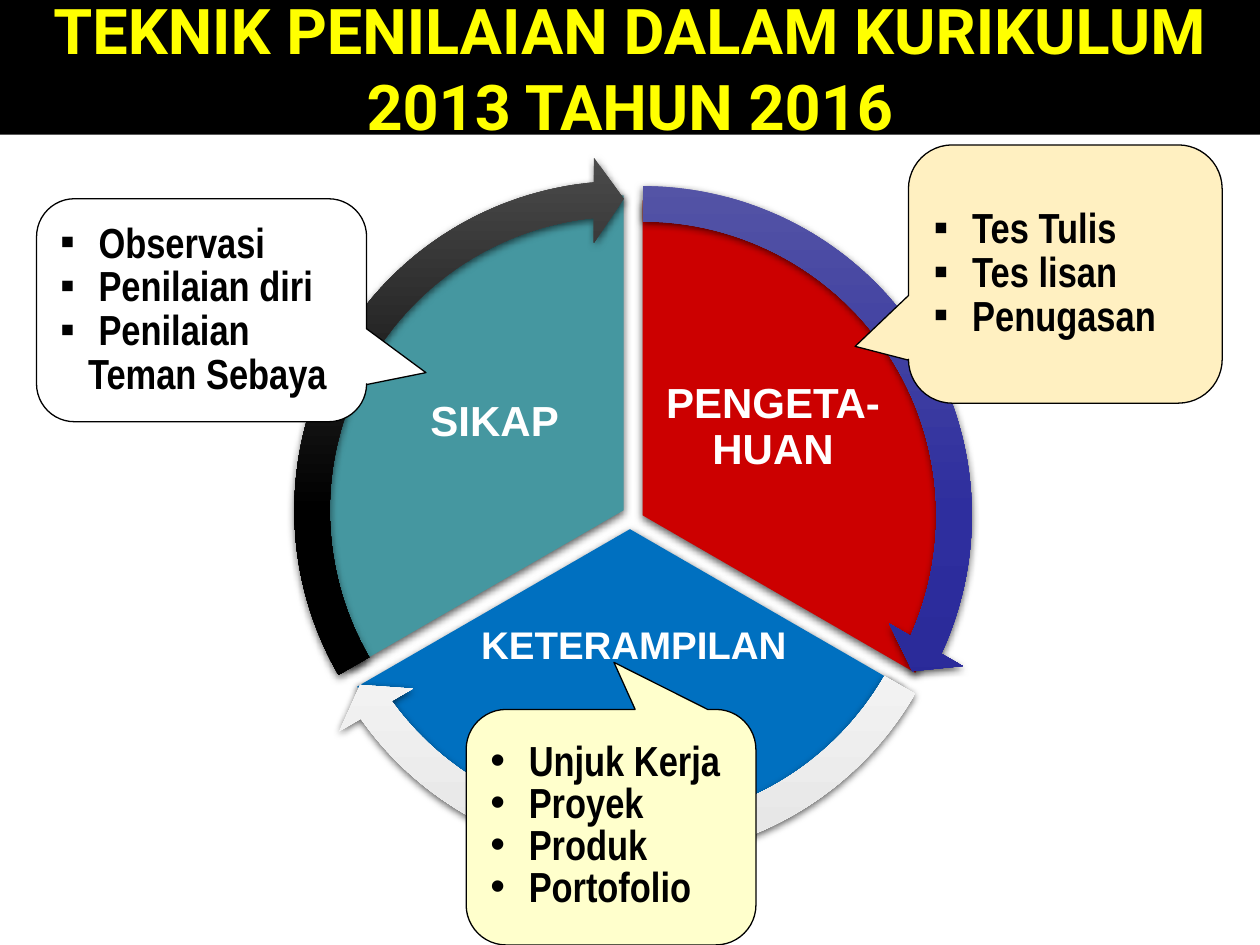
from copy import deepcopy

from lxml import etree
from pptx import Presentation
from pptx.dml.color import RGBColor
from pptx.enum.shapes import MSO_SHAPE
from pptx.enum.text import MSO_ANCHOR, MSO_AUTO_SIZE, PP_ALIGN
from pptx.oxml.ns import qn
from pptx.util import Pt

PIE, ARROW = MSO_SHAPE.PIE, MSO_SHAPE.CIRCULAR_ARROW
CALLOUT = MSO_SHAPE.ROUNDED_RECTANGULAR_CALLOUT
TOP, MIDDLE = MSO_ANCHOR.TOP, MSO_ANCHOR.MIDDLE
LEFT, CENTER = PP_ALIGN.LEFT, PP_ALIGN.CENTER
NO_AUTOFIT = MSO_AUTO_SIZE.NONE

BLACK = RGBColor(0x00, 0x00, 0x00)
WHITE = RGBColor(0xFF, 0xFF, 0xFF)
YELLOW = RGBColor(0xFF, 0xFF, 0x00)
RED = RGBColor(0xCC, 0x00, 0x00)
BLUE = RGBColor(0x00, 0x70, 0xC0)
TEAL = RGBColor(0x45, 0x97, 0xA0)
CREAM = RGBColor(0xFF, 0xF0, 0xC1)
PALE_YELLOW = RGBColor(0xFF, 0xFF, 0xCC)
INDIGO = [RGBColor(0x56, 0x56, 0xA6), RGBColor(0x2E, 0x2E, 0x9E), RGBColor(0x24, 0x24, 0x91)]
SILVER = [WHITE, WHITE, RGBColor(0xE3, 0xE3, 0xE3)]
CHARCOAL = [RGBColor(0x4B, 0x4B, 0x4B), BLACK, BLACK]

TITLE = "TEKNIK PENILAIAN DALAM KURIKULUM 2013 TAHUN 2016"

# Sectors run clockwise; angles are in degrees from three o'clock.
SECTORS = [
    dict(text="PENGETA-HUAN", size=24, anchor=MIDDLE, label=(377.3, 190.8, 128.9, 107.3),
         center=(367.2, 294.5), start=270, end=30, fill=RED, arrow=INDIGO),
    dict(text="KETERAMPILAN", size=22, anchor=TOP, label=(265.7, 355.7, 193, 94.3),
         center=(360, 302.4), start=30, end=150, fill=BLUE, arrow=SILVER),
    dict(text="SIKAP", size=24, anchor=MIDDLE, label=(218.2, 187.9, 128.9, 107.3),
         center=(356.4, 291.6), start=150, end=270, fill=TEAL, arrow=CHARCOAL),
]
SECTOR_RADIUS, ARROW_RADIUS = 180, 202.3
ARROW_WIDTH, ARROW_HEAD_ANGLE, ARROW_HEAD_WIDTH = 0.05, 5.46, 0.06
DEGREE = 0.6  # one degree as a shape adjustment

# Each line is (bullet, text).
CALLOUTS = [
    dict(frame=(266.4, 405.4, 165.6, 134.6), tip=(0.01, -0.7), fill=PALE_YELLOW, spacing=24,
         lines=[("•", "Unjuk Kerja"), ("•", "Proyek"), ("•", "Produk"), ("•", "Portofolio")]),
    dict(frame=(20.9, 113.6, 188.6, 127.4), tip=(0.68, 0.28), fill=WHITE, spacing=25,
         lines=[("▪", "Observasi"), ("▪", "Penilaian diri"), ("▪", "Penilaian"),
                (None, "Teman Sebaya")]),
    dict(frame=(519.1, 82.8, 179.3, 147.6), tip=(-0.67, 0.28), fill=CREAM, spacing=25,
         lines=[("▪", "Tes Tulis"), ("▪", "Tes lisan"), ("▪", "Penugasan")]),
]
CALLOUT_CORNER, BULLET_INDENT, PLAIN_INDENT = 0.17, 22, 16


def points(frame):
    return [Pt(value) for value in frame]


def set_font(paragraph, **values):
    color = values.pop("color")
    for name, value in values.items():
        setattr(paragraph.font, name, value)
    paragraph.font.color.rgb = color


def set_bullet(paragraph, bullet):
    """Hang the text behind its bullet, or indent it when there is none."""
    properties = paragraph._p.get_or_add_pPr()
    indent = BULLET_INDENT if bullet else PLAIN_INDENT
    properties.set("marL", str(Pt(indent)))
    properties.set("indent", str(Pt(-indent) if bullet else 0))
    if bullet:
        etree.SubElement(properties, qn("a:buFont"), typeface="Arial")
        etree.SubElement(properties, qn("a:buChar"), char=bullet)
    else:
        etree.SubElement(properties, qn("a:buNone"))


def add_soft_shadow(shape):
    shape.shadow.inherit = False
    effects = shape._element.spPr.find(qn("a:effectLst"))
    shadow = etree.SubElement(effects, qn("a:outerShdw"), blurRad=str(Pt(4.5)),
                              dist=str(Pt(1.5)), dir="5400000", rotWithShape="0")
    color = etree.SubElement(shadow, qn("a:srgbClr"), val="000000")
    etree.SubElement(color, qn("a:alpha"), val="63000")


def fill_gradient(shape, colors):
    """Spread the colours evenly from top to bottom."""
    shape.fill.gradient()
    shape.fill.gradient_angle = 270
    stop_list = next(shape._element.spPr.iter(qn("a:gsLst")))
    for _ in range(len(colors) - len(stop_list)):
        stop_list.append(deepcopy(stop_list[0]))
    for index, (stop, color) in enumerate(zip(shape.fill.gradient_stops, colors)):
        stop.color.rgb = color
        stop.position = index / (len(colors) - 1)


def add_round_part(page, kind, center, radius, adjustments):
    x, y = center
    shape = page.shapes.add_shape(
        kind, *points((x - radius, y - radius, 2 * radius, 2 * radius)))
    for index, value in enumerate(adjustments):
        shape.adjustments[index] = value
    shape.line.fill.background()
    add_soft_shadow(shape)
    return shape


def add_sector(page, sector):
    angles = sector["start"] * DEGREE, sector["end"] * DEGREE
    pie = add_round_part(page, PIE, sector["center"], SECTOR_RADIUS, angles)
    pie.fill.solid()
    pie.fill.fore_color.rgb = sector["fill"]

    frame = page.shapes.add_textbox(*points(sector["label"])).text_frame
    frame.word_wrap = True
    frame.vertical_anchor = sector["anchor"]
    for side in ("left", "right", "top", "bottom"):
        setattr(frame, f"margin_{side}", Pt(2.2))
    paragraph = frame.paragraphs[0]
    paragraph.text = sector["text"]
    paragraph.alignment = CENTER
    paragraph.line_spacing = 0.9
    set_font(paragraph, name="Arial", size=Pt(sector["size"]), bold=True, color=WHITE)


def add_arrow(page, sector):
    head = ARROW_HEAD_ANGLE
    adjustments = (ARROW_WIDTH, head * DEGREE, (sector["end"] - head) * DEGREE,
                   sector["start"] * DEGREE, ARROW_HEAD_WIDTH)
    arrow = add_round_part(page, ARROW, sector["center"], ARROW_RADIUS, adjustments)
    fill_gradient(arrow, sector["arrow"])


def add_callout(page, callout):
    box = page.shapes.add_shape(CALLOUT, *points(callout["frame"]))
    for index, value in enumerate((*callout["tip"], CALLOUT_CORNER)):
        box.adjustments[index] = value
    box.shadow.inherit = False
    box.fill.solid()
    box.fill.fore_color.rgb = callout["fill"]
    box.line.color.rgb = BLACK
    box.line.width = Pt(0.75)
    frame = box.text_frame
    frame.word_wrap = True
    frame.vertical_anchor = MIDDLE
    for index, (bullet, text) in enumerate(callout["lines"]):
        paragraph = frame.add_paragraph() if index else frame.paragraphs[0]
        paragraph.text = text
        paragraph.alignment = LEFT
        paragraph.line_spacing = Pt(callout["spacing"])
        set_bullet(paragraph, bullet)
        set_font(paragraph, name="Arial Narrow", size=Pt(24), bold=True, color=BLACK)


def add_title(page):
    title = page.shapes.title
    title.left, title.top, title.width, title.height = points((0, 0, 720, 77))
    title.fill.solid()
    title.fill.fore_color.rgb = BLACK
    frame = title.text_frame
    frame.text = TITLE
    frame.word_wrap = True
    frame.auto_size = NO_AUTOFIT
    frame.vertical_anchor = MIDDLE
    frame.paragraphs[0].alignment = CENTER
    set_font(frame.paragraphs[0], name="Roboto", size=Pt(36), bold=True, color=YELLOW)


def main():
    deck = Presentation()
    deck.slide_width, deck.slide_height = Pt(720), Pt(540)
    page = deck.slides.add_slide(deck.slide_layouts[5])
    add_title(page)
    for add_part, parts in ((add_sector, SECTORS), (add_arrow, SECTORS), (add_callout, CALLOUTS)):
        for part in parts:
            add_part(page, part)
    deck.save("out.pptx")


if __name__ == "__main__":
    main()
